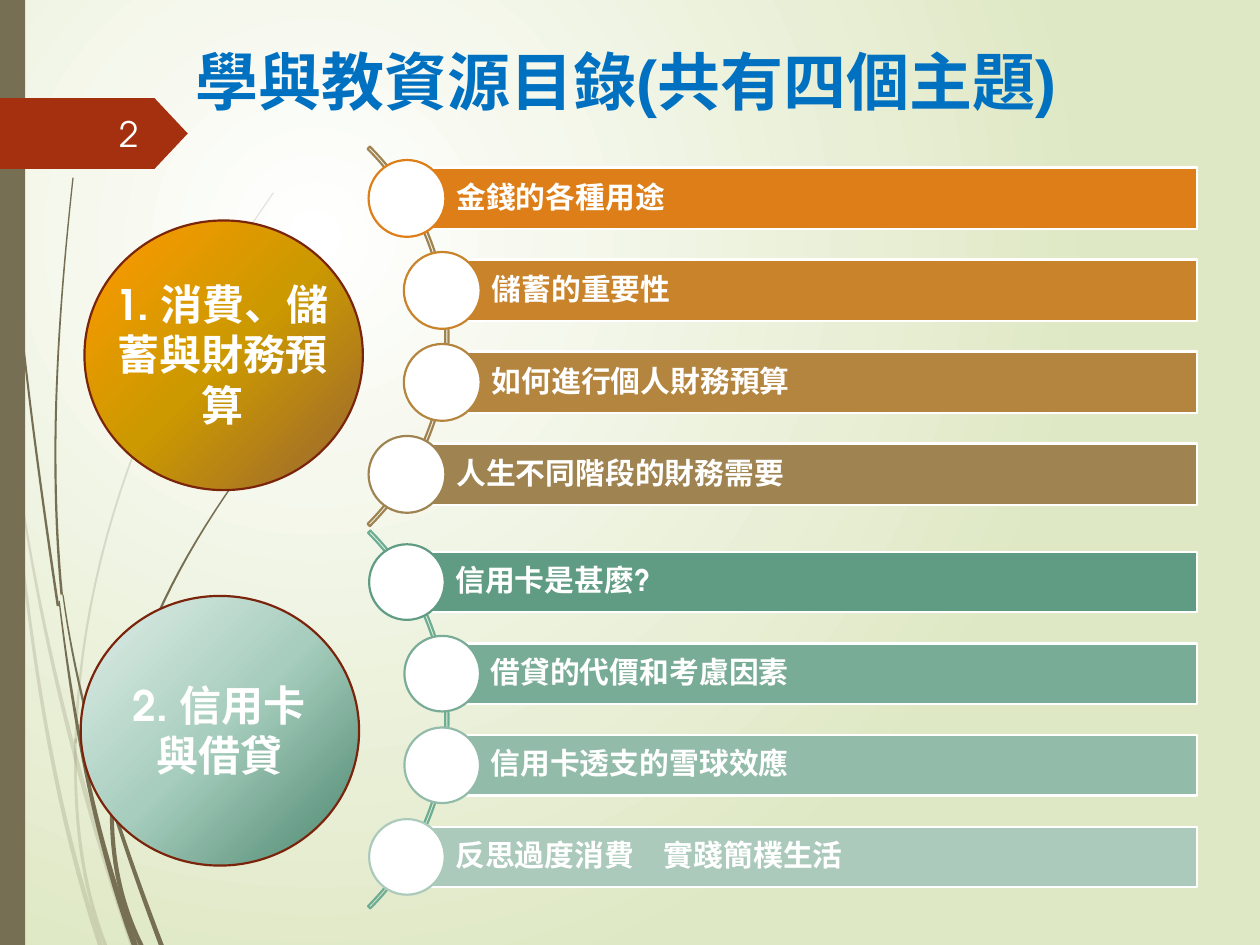
from lxml import etree
from pptx import Presentation
from pptx.dml.color import RGBColor
from pptx.enum import shapes, text
from pptx.oxml import ns, parse_xml
from pptx.util import Inches, Pt

SHAPE = shapes.MSO_SHAPE
ALIGN = text.PP_ALIGN
ANCHOR = text.MSO_ANCHOR
FONT = "TeX Gyre Adventor"
WHITE, OLIVE, RED, RIM = "FFFFFF", "766F54", "A53010", "7A240C"
TITLE = "學與教資源目錄(共有四個主題)"

# Each topic: arc box, arc colour, first bar top, bar height, step, dot size, bars
TOPICS = [
    ((-0.7, 0.54, 4.26), "9F8351", 1.33, 0.49, 0.73, 0.61, [
        ("金錢的各種用途", "DE7E18"),
        ("儲蓄的重要性", "C9832B"),
        ("如何進行個人財務預算", "B4853E"),
        ("人生不同階段的財務需要", "9F8351")]),
    ((-0.68, 3.59, 4.24), "6DAD93", 4.38, 0.48, 0.727, 0.6, [
        ("信用卡是甚麼?", "609C84"),
        ("借貸的代價和考慮因素", "79AC96"),
        ("信用卡透支的雪球效應", "92BBA9"),
        ("反思過度消費　實踐簡樸生活", "ABCABC")]),
]
BAR_LEFTS, BAR_RIGHT = (3.23, 3.51, 3.51, 3.23), 9.5
ARC_ADJUSTMENTS = (189, 27, 0.006)

LINEAR = '<a:lin ang="2700000" scaled="0"/>'
RADIAL = '<a:path path="circle"><a:fillToRect {}/></a:path>'
# Each disc: box, gradient stops, gradient direction, text box, lines
DISCS = [
    ((0.67, 1.75, 2.21, 2.14), [(0, "FF9900"), (50, "CC9900"), (100, "996633")], LINEAR,
     (0.81, 2.16, 1.91, 1.31), ["1. 消費、儲蓄與財務預算"]),
    ((0.64, 4.73, 2.21, 2.14), [(0, "4B866E"), (50, "A6CDBD"), (100, "E1EEE9")],
     RADIAL.format('l="100000" t="100000"'),
     (0.89, 5.34, 1.7, 0.91), ["2. 信用卡", "與借貸"]),
]

# Each blade of grass: top, bottom, x at four evenly spaced heights, top and bottom width
PALE_GRASS = [
    (2.82, 7.51, (0, 0.17, 0.4, 0.8), 0.01, 0.04),
    (3.45, 7.51, (0.1, 0.32, 0.64, 1.06), 0.01, 0.05),
    (1.53, 5.9, (2.17, 1.32, 0.8, 0.6), 0.01, 0.02),
    (5.86, 7.51, (0.6, 0.61, 0.68, 0.84), 0.02, 0.03),
]
DARK_GRASS = [
    (0, 4.81, (0.02, 0.08, 0.24, 0.46), 0.01, 0.02),
    (4.77, 7.5, (0.47, 0.6, 0.79, 1.07), 0.01, 0.05),
    (4.72, 7.5, (0.5, 0.68, 0.95, 1.28), 0.01, 0.04),
    (1.41, 4.72, (0.58, 0.48, 0.44, 0.49), 0.01, 0.02),
    (3.44, 6.35, (2.15, 1.49, 1.06, 0.89), 0.01, 0.03),
    (6.31, 7.5, (0.89, 0.9, 0.97, 1.12), 0.03, 0.04),
]
BLADE_STEPS = 24


def color(value):
    return RGBColor.from_string(value)


def paint(shape, fill=None, line=None):
    shape.shadow.inherit = False
    if fill:
        shape.fill.solid()
        shape.fill.fore_color.rgb = color(fill)
    else:
        shape.fill.background()
    if line:
        shape.line.color.rgb = color(line)
        shape.line.width = Pt(1.25)
    else:
        shape.line.fill.background()
    return shape


def first_solid_fill(element):
    return next(element.iter(ns.qn("a:solidFill")))


def set_gradient(element, stops, direction):
    """Replace the first solid fill in the element by a gradient."""
    marks = "".join(f'<a:gs pos="{place * 1000}"><a:srgbClr val="{value}"/></a:gs>'
                    for place, value in stops)
    solid = first_solid_fill(element)
    solid.getparent().replace(solid, parse_xml(
        f'<a:gradFill {ns.nsdecls("a")} rotWithShape="1"><a:gsLst>{marks}</a:gsLst>'
        f'{direction}</a:gradFill>'))


def add_preset(slide, kind, box, fill=None, line=None):
    return paint(slide.shapes.add_shape(kind, *map(Inches, box)), fill, line)


def curve_through(values, t):
    """Value at t (0 to 1) of the cubic that passes through four evenly spaced values."""
    total = 0
    for i, value in enumerate(values):
        for j in range(4):
            if j != i:
                value *= (3 * t - j) / (i - j)
        total += value
    return total


def add_blade(slide, top, bottom, spine, top_width, bottom_width, opacity):
    """Draw a tapering blade: down its left edge, then back up its right edge."""
    left_edge, right_edge = [], []
    for step in range(BLADE_STEPS + 1):
        t = step / BLADE_STEPS
        x, y = curve_through(spine, t), top + t * (bottom - top)
        half_width = (top_width + t * (bottom_width - top_width)) / 2
        left_edge.append((Inches(x - half_width), Inches(y)))
        right_edge.append((Inches(x + half_width), Inches(y)))
    start, *corners = left_edge + right_edge[::-1]
    builder = slide.shapes.build_freeform(*start)
    builder.add_line_segments(corners, close=True)
    blade = paint(builder.convert_to_shape(), OLIVE)
    if opacity < 100:
        etree.SubElement(first_solid_fill(blade._element)[0], ns.qn("a:alpha"),
                         val=str(opacity * 1000))


def write(shape, lines, size, align, anchor, value=WHITE, font=FONT, bold=True, spacing=None):
    frame = shape.text_frame
    frame.text = "\n".join(lines)
    frame.word_wrap = True
    frame.auto_size = text.MSO_AUTO_SIZE.NONE
    frame.vertical_anchor = anchor
    for paragraph in frame.paragraphs:
        paragraph.alignment = align
        paragraph.line_spacing = spacing
        run_font = paragraph.runs[0].font
        for name, setting in {"name": font, "size": Pt(size), "bold": bold}.items():
            setattr(run_font, name, setting)
        run_font.color.rgb = color(value)


def add_topic(slide, arc, arc_color, top, height, step, dot, bars):
    """Draw an arc with a row of bar and dot for each entry, dots centred on bar ends."""
    arc_left, arc_top, arc_size = arc
    ring = add_preset(slide, SHAPE.BLOCK_ARC, (arc_left, arc_top, arc_size, arc_size),
                      line=arc_color)
    for index, setting in enumerate(ARC_ADJUSTMENTS):
        ring.adjustments[index] = setting
    for row, (left, (label, fill)) in enumerate(zip(BAR_LEFTS, bars)):
        y = top + row * step
        bar = add_preset(slide, SHAPE.RECTANGLE, (left, y, BAR_RIGHT - left, height), fill, WHITE)
        write(bar, [label], 17, ALIGN.LEFT, ANCHOR.MIDDLE, spacing=0.9)
        margins = {"left": 0.8 * height, "top": 0.05, "right": 0.05, "bottom": 0.05}
        for side, inset in margins.items():
            setattr(bar.text_frame, f"margin_{side}", Inches(inset))
        add_preset(slide, SHAPE.OVAL, (left - dot / 2, y + (height - dot) / 2, dot, dot),
                   WHITE, fill)


def add_backdrop(slide):
    slide.background.fill.solid()
    slide.background.fill.fore_color.rgb = color(WHITE)
    set_gradient(slide._element, [(0, WHITE), (100, "DFE8C4")],
                 RADIAL.format('l="50000" t="50000" r="100000" b="100000"'))
    for grass, opacity in ((PALE_GRASS, 20), (DARK_GRASS, 100)):
        for blade in grass:
            add_blade(slide, *blade, opacity)
    add_preset(slide, SHAPE.RECTANGLE, (0, 0, 0.2, 7.5), OLIVE)


def add_page_number(slide):
    tag = add_preset(slide, SHAPE.PENTAGON, (0, 0.78, 1.49, 0.56), RED)
    tag.adjustments[0] = 0.47
    number = slide.shapes.add_textbox(*map(Inches, (0.56, 0.86, 0.64, 0.4)))
    write(number, ["2"], 20, ALIGN.RIGHT, ANCHOR.MIDDLE, "FEFFFF", bold=False)


def add_disc(slide, box, stops, direction, label_box, lines):
    disc = add_preset(slide, SHAPE.OVAL, box, WHITE, RIM)
    set_gradient(disc._element, stops, direction)
    label = slide.shapes.add_textbox(*map(Inches, label_box))
    write(label, lines, 24, ALIGN.CENTER, ANCHOR.TOP)


def place_title(slide):
    title = slide.shapes.title
    title.left, title.top, title.width, title.height = map(Inches, (1.45, 0.29, 7.21, 0.82))
    write(title, [TITLE], 36, ALIGN.LEFT, ANCHOR.TOP, "0070C0", "Arial")


def main():
    presentation = Presentation()
    presentation.slide_width, presentation.slide_height = Inches(10), Inches(7.5)
    slide = presentation.slides.add_slide(presentation.slide_layouts[5])
    add_backdrop(slide)
    add_page_number(slide)
    for topic in TOPICS:
        add_topic(slide, *topic)
    for disc in DISCS:
        add_disc(slide, *disc)
    place_title(slide)
    presentation.save("out.pptx")


if __name__ == "__main__":
    main()
